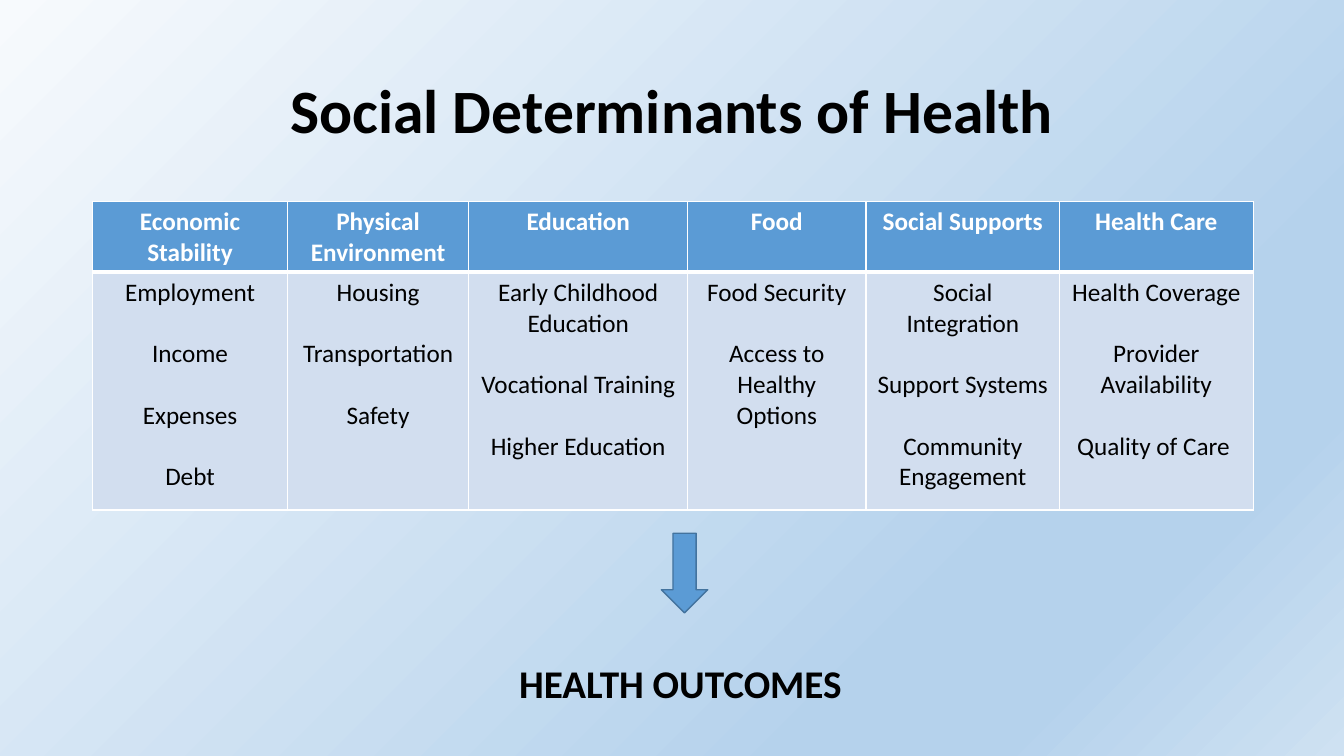
from copy import deepcopy
from dataclasses import dataclass

from lxml.etree import SubElement
from pptx import Presentation
from pptx.dml.color import RGBColor
from pptx.enum.shapes import MSO_SHAPE
from pptx.enum.text import MSO_ANCHOR, PP_ALIGN
from pptx.oxml.ns import qn
from pptx.slide import Slide
from pptx.table import _Cell
from pptx.util import Inches, Pt


@dataclass(frozen=True)
class Theme:
    font: str = "Calibri"
    black: str = "000000"
    white: str = "FFFFFF"
    blue: str = "5B9BD5"
    blue_line: str = "43739E"
    pale: str = "D2DEEF"
    background: tuple = ((0, "F7FAFD"), (0.74, "B5D2EC"), (0.83, "B5D2EC"), (1, "CEE1F2"))
    title_size: int = 44
    outcome_size: int = 28
    table_size: int = 18
    item_gap: int = 22
    thin: int = 1
    thick: int = 3


@dataclass(frozen=True)
class Determinant:
    name: str
    width: float
    items: tuple[str, ...]


@dataclass(frozen=True)
class Label:
    text: str
    box: tuple[float, float, float, float]
    size: int
    align: PP_ALIGN
    anchor: MSO_ANCHOR
    line_spacing: float


THEME = Theme()

DETERMINANTS = (
    Determinant("Economic Stability", 1.93, ("Employment", "Income", "Expenses", "Debt")),
    Determinant("Physical Environment", 1.8, ("Housing", "Transportation", "Safety")),
    Determinant("Education", 2.17,
                ("Early Childhood Education", "Vocational Training", "Higher Education")),
    Determinant("Food", 1.77, ("Food Security", "Access to Healthy Options")),
    Determinant("Social Supports", 1.92,
                ("Social Integration", "Support Systems", "Community Engagement")),
    Determinant("Health Care", 1.92,
                ("Health Coverage", "Provider Availability", "Quality of Care ")),
)

LABELS = (
    Label("Social Determinants of Health", (0.92, 0.4, 11.5, 1.45), THEME.title_size,
          PP_ALIGN.CENTER, MSO_ANCHOR.MIDDLE, 0.9),
    Label("HEALTH OUTCOMES", (5.05, 6.49, 3.47, 0.88), THEME.outcome_size,
          PP_ALIGN.LEFT, MSO_ANCHOR.TOP, 1.0),
)


def rgb(color: str) -> RGBColor:
    return RGBColor.from_string(color)


def style_font(font, size: int, color: str, bold: bool) -> None:
    font.name = THEME.font
    font.size = Pt(size)
    font.bold = bold
    font.color.rgb = rgb(color)


def paint_background(s: Slide) -> None:
    fill = s.background.fill
    fill.gradient()
    fill.gradient_angle = 315
    stops = s.element.find(".//" + qn("a:gsLst"))
    while len(stops) < len(THEME.background):
        stops.append(deepcopy(stops[0]))
    for stop, (position, color) in zip(fill.gradient_stops, THEME.background):
        stop.position = position
        stop.color.rgb = rgb(color)


def add_label(s: Slide, label: Label) -> None:
    tf = s.shapes.add_textbox(*map(Inches, label.box)).text_frame
    tf.word_wrap = True
    tf.vertical_anchor = label.anchor
    p = tf.paragraphs[0]
    p.text = label.text
    p.alignment = label.align
    p.line_spacing = label.line_spacing
    style_font(p.font, label.size, THEME.black, True)


def set_borders(cell: _Cell, top: int, bottom: int) -> None:
    tc_pr = cell._tc.get_or_add_tcPr()
    widths = {"a:lnL": THEME.thin, "a:lnR": THEME.thin, "a:lnT": top, "a:lnB": bottom}
    for side, width in widths.items():
        ln = SubElement(tc_pr, qn(side), w=str(Pt(width)))
        SubElement(SubElement(ln, qn("a:solidFill")), qn("a:srgbClr"), val=THEME.white)


def fill_cell(cell: _Cell, lines: tuple[str, ...], header: bool) -> None:
    # Borders come before the fill in the cell properties
    if header:
        set_borders(cell, THEME.thin, THEME.thick)
    else:
        set_borders(cell, THEME.thick, THEME.thin)
    cell.fill.solid()
    cell.fill.fore_color.rgb = rgb(THEME.blue if header else THEME.pale)
    tf = cell.text_frame
    tf.text = "\n".join(lines)
    for i, p in enumerate(tf.paragraphs):
        p.alignment = PP_ALIGN.CENTER
        p.space_before = Pt(THEME.item_gap if i else 0)
        style_font(p.font, THEME.table_size, THEME.white if header else THEME.black, header)


def add_determinants(s: Slide) -> None:
    width = sum(d.width for d in DETERMINANTS)
    table = s.shapes.add_table(2, len(DETERMINANTS), Inches(0.92), Inches(2),
                               Inches(width), Inches(3.06)).table
    for row, height in zip(table.rows, (0.7, 2.36)):
        row.height = Inches(height)
    for col, d in enumerate(DETERMINANTS):
        table.columns[col].width = Inches(d.width)
        fill_cell(table.cell(0, col), (d.name,), True)
        fill_cell(table.cell(1, col), d.items, False)


def add_arrow(s: Slide) -> None:
    sp = s.shapes.add_shape(MSO_SHAPE.DOWN_ARROW, Inches(6.56), Inches(5.29),
                            Inches(0.46), Inches(0.79))
    sp.shadow.inherit = False
    sp.fill.solid()
    sp.fill.fore_color.rgb = rgb(THEME.blue)
    sp.line.color.rgb = rgb(THEME.blue_line)
    sp.line.width = Pt(THEME.thin)


def main() -> None:
    prs = Presentation()
    prs.slide_width, prs.slide_height = Inches(13.33), Inches(7.5)
    s = prs.slides.add_slide(prs.slide_layouts[6])
    paint_background(s)

    # Title and outcome, with the table and arrow between them
    for label in LABELS:
        add_label(s, label)
    add_determinants(s)
    add_arrow(s)
    prs.save("out.pptx")


if __name__ == "__main__":
    main()
